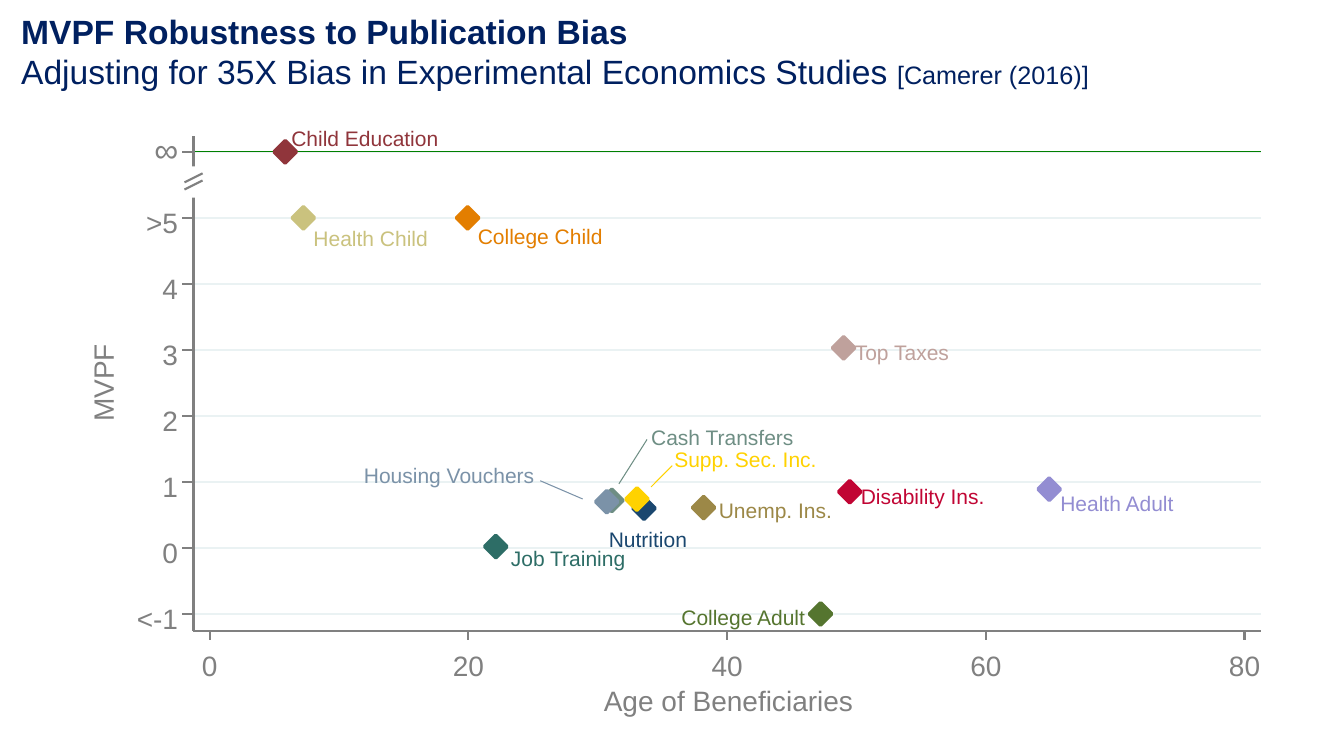
from lxml.etree import SubElement
from pptx import Presentation
from pptx.dml.color import RGBColor
from pptx.enum.shapes import MSO_CONNECTOR, MSO_SHAPE
from pptx.enum.text import MSO_ANCHOR, MSO_AUTO_SIZE, PP_ALIGN
from pptx.oxml.ns import qn
from pptx.util import Pt

NAVY = RGBColor(0x00, 0x20, 0x60)
GRAY = RGBColor(0x80, 0x80, 0x80)
GRID = RGBColor(0xEA, 0xF2, 0xF3)
GREEN = RGBColor(0x00, 0x80, 0x00)
WHITE = RGBColor(0xFF, 0xFF, 0xFF)
SAGE = RGBColor(0x6E, 0x8E, 0x84)
MAROON = RGBColor(0x90, 0x35, 0x3B)
FOREST = RGBColor(0x55, 0x75, 0x2F)
ORANGE = RGBColor(0xE3, 0x7E, 0x00)
CRIMSON = RGBColor(0xC1, 0x05, 0x34)
LAVENDER = RGBColor(0x93, 0x8D, 0xD2)
KHAKI = RGBColor(0xCA, 0xC2, 0x7E)
STEEL = RGBColor(0x7B, 0x92, 0xA8)
TEAL = RGBColor(0x2D, 0x6D, 0x66)
BLUE = RGBColor(0x1A, 0x47, 0x6F)
YELLOW = RGBColor(0xFF, 0xD2, 0x00)
ROSE = RGBColor(0xBF, 0xA1, 0x9C)
OLIVE = RGBColor(0x9C, 0x88, 0x47)

AXIS_LEFT, AXIS_RIGHT = 138.2, 900.7
AXIS_TOP, AXIS_BOTTOM = 97.2, 450.7
INFINITY = 6
MARKER_RADIUS = 8
TICK_LABELS = {-1: "<-1", 0: "0", 1: "1", 2: "2", 3: "3", 4: "4", 5: ">5"}

# name, age, MVPF, colour, label left, label top, label width
POLICIES = [
    ("Cash Transfers", 31.09, 0.72, SAGE, 465.1, 301.7, 114.5),
    ("Child Education", 5.84, INFINITY, MAROON, 208.1, 87.8, 116.6),
    ("College Adult", 47.22, -1, FOREST, 486.7, 429.8, 100.8),
    ("College Child", 19.94, 5, ORANGE, 341.3, 157.7, 100.8),
    ("Disability Ins.", 49.48, 0.85, CRIMSON, 614.9, 343.4, 100.1),
    ("Health Adult", 64.9, 0.89, LAVENDER, 757.4, 348.5, 92.2),
    ("Health Child", 7.24, 5, KHAKI, 223.9, 159.1, 92.2),
    ("Housing Vouchers", 30.7, 0.7, STEEL, 259.9, 328.3, 135.4),
    ("Job Training", 22.12, 0.02, TEAL, 365, 388.1, 93.6),
    ("Nutrition", 33.58, 0.6, BLUE, 434.9, 374.4, 65.5),
    ("Supp. Sec. Inc.", 33.03, 0.74, YELLOW, 481.7, 316.8, 113),
    ("Top Taxes", 49.01, 3.03, ROSE, 610.6, 240.5, 80.6),
    ("Unemp. Ins.", 38.18, 0.61, OLIVE, 513.4, 353.5, 92.2),
]
LEADERS = [
    (385.9, 343.4, 416.2, 356.4, STEEL),
    (442.1, 345.6, 462.2, 313.9, SAGE),
    (465.1, 347.8, 480.2, 332.6, YELLOW),
]


def age_x(age):
    """Give the horizontal place of an age."""
    return 149.8 + 9.24 * age


def mvpf_y(value):
    """Give the vertical place of an MVPF value."""
    return 391.4 - 47.15 * value


class Painter:
    """Draw styled elements on the current slide."""

    font = "Arial"

    def __init__(self, page):
        """Keep the slide to draw on."""
        self.page = page

    def span(self, para, words, size, color, bold=False):
        """Add one formatted run."""
        span = para.add_run()
        span.text = words
        span.font.name = self.font
        span.font.size = Pt(size)
        span.font.bold = bold
        span.font.color.rgb = color

    def frame(self, box):
        """Prepare the text frame of a box."""
        frame = box.text_frame
        frame.margin_left = frame.margin_right = 0
        frame.margin_top = frame.margin_bottom = 0
        frame.word_wrap = True
        frame.auto_size = MSO_AUTO_SIZE.NONE
        frame.vertical_anchor = MSO_ANCHOR.MIDDLE
        return frame

    def title(self, left, top, width, height, lines):
        """Fill the title placeholder with lines of runs."""
        box = self.page.shapes.title
        box.left, box.top, box.width, box.height = map(Pt, (left, top, width, height))
        frame = self.frame(box)
        for index, spans in enumerate(lines):
            para = frame.add_paragraph() if index else frame.paragraphs[0]
            para.alignment = PP_ALIGN.LEFT
            for words, size, bold in spans:
                self.span(para, words, size, NAVY, bold)

    def text(self, words, left, top, width, height, size=20, color=GRAY,
             align=PP_ALIGN.LEFT, rotation=0):
        """Add a one-line text box."""
        box = self.page.shapes.add_textbox(*map(Pt, (left, top, width, height)))
        box.rotation = rotation
        para = self.frame(box).paragraphs[0]
        para.alignment = align
        self.span(para, words, size, color)

    def line(self, x1, y1, x2, y2, color=GRAY, weight=1.5):
        """Add a straight line."""
        line = self.page.shapes.add_connector(
            MSO_CONNECTOR.STRAIGHT, *map(Pt, (x1, y1, x2, y2)))
        line.line.color.rgb = color
        line.line.width = Pt(weight)
        SubElement(line._element.spPr, qn("a:effectLst"))

    def shape(self, kind, left, top, width, height, color, weight=0):
        """Add a filled preset shape."""
        shape = self.page.shapes.add_shape(kind, *map(Pt, (left, top, width, height)))
        shape.shadow.inherit = False
        shape.fill.solid()
        shape.fill.fore_color.rgb = color
        if weight:
            shape.line.color.rgb = color
            shape.line.width = Pt(weight)
        else:
            shape.line.fill.background()

    def marker(self, age, value, color):
        """Add a diamond at a data point."""
        side = 2 * MARKER_RADIUS
        self.shape(MSO_SHAPE.DIAMOND, age_x(age) - MARKER_RADIUS,
                   mvpf_y(value) - MARKER_RADIUS, side, side, color, 2.5)


def main():
    """Build the slide and save it."""
    deck = Presentation()
    deck.slide_width, deck.slide_height = Pt(960), Pt(540)
    page = deck.slides.add_slide(deck.slide_layouts[5])
    painter = Painter(page)

    painter.title(15.1, 7.2, 843.8, 58.3, [
        [("MVPF Robustness to Publication Bias", 24, True)],
        [("Adjusting for 35X Bias in Experimental Economics Studies ", 24, False),
         ("[Camerer (2016)]", 18, False)],
    ])

    for value in range(-1, INFINITY + 1):
        painter.line(AXIS_LEFT, mvpf_y(value), AXIS_RIGHT, mvpf_y(value), GRID)
    painter.line(AXIS_LEFT, mvpf_y(INFINITY), AXIS_RIGHT, mvpf_y(INFINITY), GREEN, 0.75)

    for name, age, value, color, left, top, width in POLICIES:
        painter.marker(age, value, color)

    painter.line(AXIS_LEFT, AXIS_BOTTOM, AXIS_LEFT, AXIS_TOP)
    for value in range(-1, INFINITY + 1):
        painter.line(AXIS_LEFT, mvpf_y(value), AXIS_LEFT - 7.9, mvpf_y(value))
    for value, words in TICK_LABELS.items():
        painter.text(words, 87.2, mvpf_y(value) - 11.2, 40, 28, align=PP_ALIGN.RIGHT)
    painter.text("MVPF", 41, 254.9, 64.8, 28, rotation=270)

    painter.line(AXIS_LEFT, AXIS_BOTTOM, AXIS_RIGHT, AXIS_BOTTOM)
    for age in range(0, 81, 20):
        painter.line(age_x(age), AXIS_BOTTOM, age_x(age), AXIS_BOTTOM + 6.5)
        painter.text(str(age), age_x(age) - 20, 461.5, 40, 28, align=PP_ALIGN.CENTER)
    painter.text("Age of Beneficiaries", 431.3, 486, 188.6, 28)

    painter.shape(MSO_SHAPE.RECTANGLE, 115.9, 118.8, 41.8, 22.3, WHITE)
    for bottom in (130.3, 135.4):
        painter.line(131.8, bottom, 144.7, bottom - 6.5)
    painter.text("∞", 110.2, 92.2, 18, 28.8, size=24)

    for name, age, value, color, left, top, width in POLICIES:
        painter.text(name, left, top, width, 21.6, 15, color)
    for x1, y1, x2, y2, color in LEADERS:
        painter.line(x1, y1, x2, y2, color, 0.75)

    deck.save("out.pptx")


if __name__ == "__main__":
    main()
